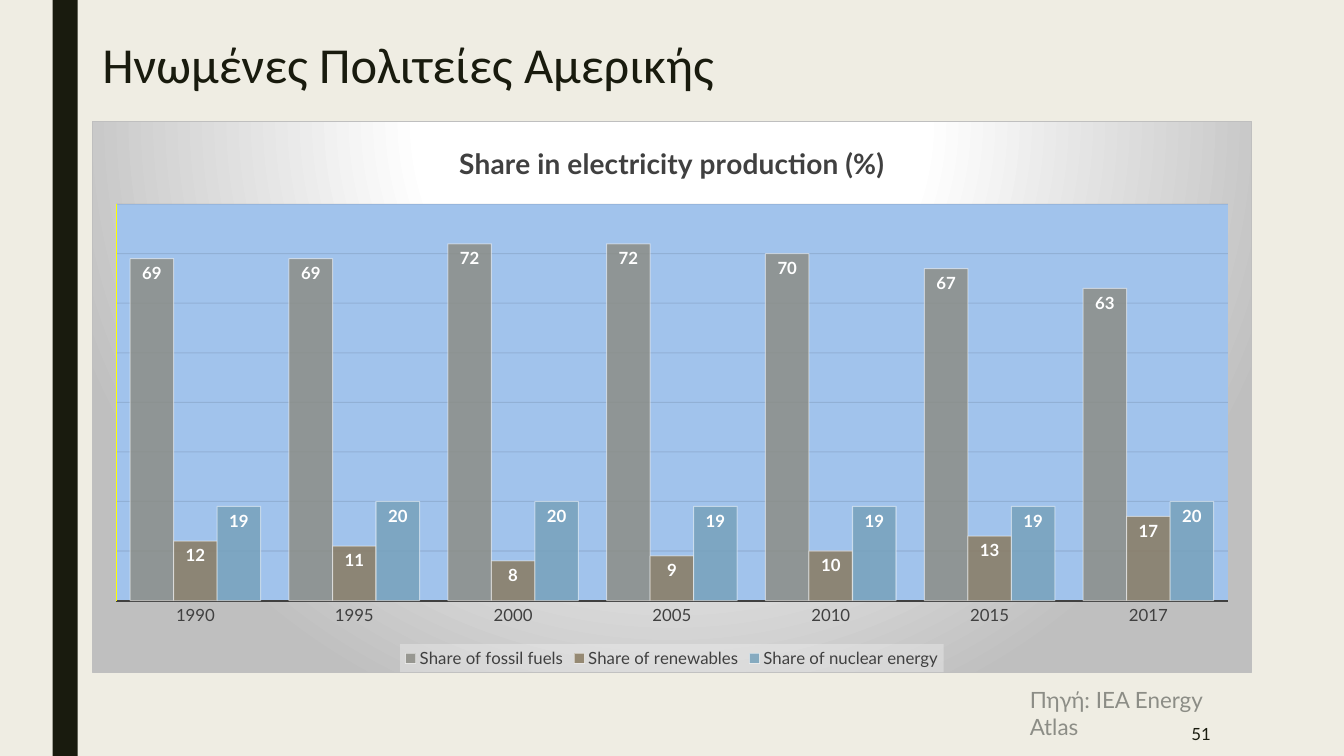
from lxml.etree import SubElement
from pptx import Presentation
from pptx.chart.data import CategoryChartData
from pptx.dml.color import RGBColor
from pptx.enum.chart import XL_CHART_TYPE, XL_LABEL_POSITION, XL_LEGEND_POSITION
from pptx.enum.chart import XL_TICK_LABEL_POSITION, XL_TICK_MARK
from pptx.enum.shapes import MSO_SHAPE
from pptx.enum.text import MSO_ANCHOR, PP_ALIGN
from pptx.oxml import parse_xml
from pptx.oxml.ns import nsdecls, qn
from pptx.util import Pt

COLORS = {
    "paper": "EFEDE3", "ink": "191B0E", "muted": "8C8D86", "text": "404040",
    "white": "FFFFFF", "silver": "BFBFBF", "sky": "A1C3EC", "grid": "0D0D0D",
    "axis": "FFFF00", "legend": "F2F2F2",
    "fossil": "8C8D86", "renewable": "897B61", "nuclear": "77A2BB",
}
YEARS = ["1990", "1995", "2000", "2005", "2010", "2015", "2017"]
SHARES = [
    ("Share of fossil fuels", "fossil", [69, 69, 72, 72, 70, 67, 63]),
    ("Share of renewables", "renewable", [12, 11, 8, 9, 10, 13, 17]),
    ("Share of nuclear energy", "nuclear", [19, 20, 20, 19, 19, 19, 20]),
]


def rgb(name):
    return RGBColor.from_string(COLORS[name])


def paint(fill, color, alpha=None):
    fill.solid()
    fill.fore_color.rgb = rgb(color)
    if alpha:
        for tint in fill._xPr.iter(qn("a:srgbClr")):
            if tint.getparent().getparent() is fill._xPr:
                SubElement(tint, qn("a:alpha")).set("val", str(alpha * 1000))


def draw_line(line, color, width, alpha=None):
    line.width = Pt(width)
    paint(line.fill, color, alpha)


def style_font(font, size, color, bold=False, face="Lato"):
    font.name = face
    font.size = Pt(size)
    font.bold = bold
    font.color.rgb = rgb(color)


def add_text(slide, box, text, size, color, face="Lato",
             anchor=MSO_ANCHOR.TOP, align=PP_ALIGN.LEFT):
    frame = slide.shapes.add_textbox(*map(Pt, box)).text_frame
    frame.word_wrap = True
    frame.vertical_anchor = anchor
    paragraph = frame.paragraphs[0]
    paragraph.alignment = align
    run = paragraph.add_run()
    run.text = text
    style_font(run.font, size, color, face=face)


def add_side_bar(slide):
    bar = slide.shapes.add_shape(MSO_SHAPE.RECTANGLE, Pt(37.5), 0, Pt(18), Pt(540))
    bar.shadow.inherit = False
    paint(bar.fill, "ink")
    bar.line.fill.background()


def shape_properties(gradient=False):
    if not gradient:
        return parse_xml(
            f'<c:spPr {nsdecls("c", "a")}><a:solidFill><a:srgbClr val="{COLORS["sky"]}"/>'
            '</a:solidFill><a:ln><a:noFill/></a:ln></c:spPr>')
    stops = "".join(
        f'<a:gs pos="{position * 1000}"><a:srgbClr val="{COLORS[color]}"/></a:gs>'
        for position, color in [(0, "white"), (39, "white"), (100, "silver")])
    return parse_xml(
        f'<c:spPr {nsdecls("c", "a")}><a:gradFill><a:gsLst>{stops}</a:gsLst>'
        '<a:path path="circle"><a:fillToRect l="50000" t="-80000" r="50000" b="180000"/>'
        f'</a:path></a:gradFill><a:ln w="{Pt(0.75)}"><a:solidFill>'
        f'<a:srgbClr val="{COLORS["silver"]}"/></a:solidFill></a:ln></c:spPr>')


def style_areas(chart):
    space = chart._chartSpace
    space.chart.addnext(shape_properties(gradient=True))
    plot_area = space.chart.plotArea
    plot_area.append(shape_properties())
    for old_layout in plot_area.findall(qn("c:layout")):
        plot_area.remove(old_layout)
    places = "".join(f'<c:{tag} val="{value}"/>' for tag, value in [
        ("layoutTarget", "inner"), ("xMode", "edge"), ("yMode", "edge"),
        ("x", 0.02), ("y", 0.15), ("w", 0.96), ("h", 0.72)])
    plot_area.insert(0, parse_xml(
        f'<c:layout {nsdecls("c")}><c:manualLayout>{places}</c:manualLayout></c:layout>'))


def style_axes(chart):
    years = chart.category_axis
    years.major_tick_mark = XL_TICK_MARK.NONE
    style_font(years.tick_labels.font, 12, "text")
    draw_line(years.format.line, "text", 1.5)
    percent = chart.value_axis
    percent.minimum_scale, percent.maximum_scale, percent.major_unit = 0, 80, 10
    percent.major_tick_mark = XL_TICK_MARK.NONE
    percent.tick_label_position = XL_TICK_LABEL_POSITION.NONE
    draw_line(percent.format.line, "axis", 0.75)
    draw_line(percent.major_gridlines.format.line, "grid", 0.75, 10)


def style_series(chart):
    plot = chart.plots[0]
    plot.gap_width, plot.overlap = 65, 0
    plot.vary_by_categories = False
    for series, (_, color, _) in zip(plot.series, SHARES):
        paint(series.format.fill, color, 85)
        draw_line(series.format.line, "white", 0.75, 50)
        labels = series.data_labels
        labels.show_value = True
        labels.position = XL_LABEL_POSITION.INSIDE_END
        style_font(labels.font, 12, "white", bold=True)


def style_legend(chart):
    chart.has_legend = True
    legend = chart.legend
    legend.position = XL_LEGEND_POSITION.BOTTOM
    legend.include_in_layout = False
    style_font(legend.font, 12, "text")
    legend._element.find(qn("c:txPr")).addprevious(parse_xml(
        f'<c:spPr {nsdecls("c", "a")}><a:solidFill><a:srgbClr val="{COLORS["legend"]}">'
        '<a:alpha val="39000"/></a:srgbClr></a:solidFill></c:spPr>'))


def add_share_chart(slide):
    data = CategoryChartData()
    data.categories = YEARS
    for name, _, values in SHARES:
        data.add_series(name, values)
    chart = slide.shapes.add_chart(
        XL_CHART_TYPE.COLUMN_CLUSTERED, Pt(66), Pt(86.5), Pt(828), Pt(394), data).chart
    style_font(chart.font, 10, "ink")
    chart.has_title = True
    heading = chart.chart_title.text_frame.paragraphs[0].add_run()
    heading.text = "Share in electricity production (%)"
    style_font(heading.font, 20, "text", bold=True)
    style_areas(chart)
    style_axes(chart)
    style_series(chart)
    style_legend(chart)


def main():
    deck = Presentation()
    deck.slide_width, deck.slide_height = Pt(960), Pt(540)
    slide = deck.slides.add_slide(deck.slide_layouts[6])
    paint(slide.background.fill, "paper")
    add_side_bar(slide)
    add_text(slide, (66, 11.5, 828, 67.5), "Ηνωμένες Πολιτείες Αμερικής", 36, "ink",
             face="Calibri", anchor=MSO_ANCHOR.MIDDLE)
    add_share_chart(slide)
    add_text(slide, (746, 508, 126, 32), "51", 12, "ink",
             anchor=MSO_ANCHOR.MIDDLE, align=PP_ALIGN.RIGHT)
    add_text(slide, (728.5, 486.5, 165.5, 27), "Πηγή: IEA Energy Atlas", 16, "muted")
    deck.save("out.pptx")


if __name__ == "__main__":
    main()
